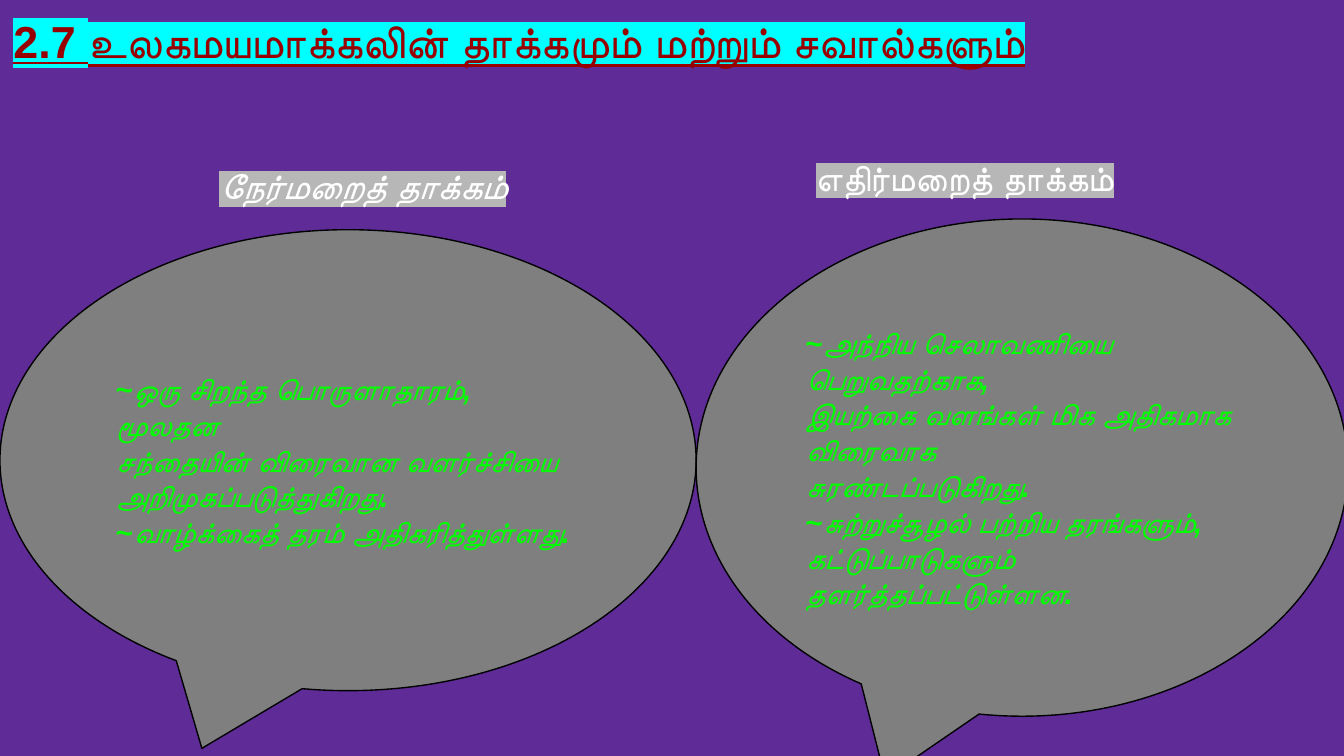
from lxml import etree
from pptx import Presentation
from pptx.dml.color import RGBColor
from pptx.enum import shapes, text
from pptx.oxml import ns
from pptx.util import Inches, Pt

HUES = {
    "back": "5E2B97", "title": "980000", "cyan": "00FFFF", "bubble": "7F7F7F",
    "edge": "000000", "green": "00FF00", "white": "FFFFFF", "grey": "B7B7B7",
}
GOOD = [
    "~ஒரு சிறந்த பொருளாதாரம், மூலதன",
    "சந்தையின் விரைவான வளர்ச்சியை",
    "அறிமுகப்படுத்துகிறது.",
    "~வாழ்க்கைத் தரம் அதிகரித்துள்ளது.",
]
BAD = [
    "~அந்நிய செலாவணியை பெறுவதற்காக,",
    "இயற்கை வளங்கள் மிக அதிகமாக விரைவாக",
    "சுரண்டப்படுகிறது.",
    "~சுற்றுச்சூழல் பற்றிய தரங்களும்,",
    "கட்டுப்பாடுகளும் தளர்த்தப்பட்டுள்ளன.",
]


def hue(name):
    """Return the named colour."""
    return RGBColor.from_string(HUES[name])


def mark(run, name):
    """Highlight a run."""
    light = etree.SubElement(run._r.get_or_add_rPr(), ns.qn("a:highlight"))
    etree.SubElement(light, ns.qn("a:srgbClr"), val=HUES[name])


def write(shape, lines, size, color, anchor="TOP", light=None, italic=False, under=False):
    """Fill a shape with bold left-aligned paragraphs."""
    frame = shape.text_frame
    frame.word_wrap = True
    frame.auto_size = text.MSO_AUTO_SIZE.NONE
    frame.vertical_anchor = text.MSO_ANCHOR[anchor]
    frame.margin_left = frame.margin_right = Inches(0.1)
    frame.margin_top = frame.margin_bottom = Inches(0.1)
    frame.text = "\n".join(lines)
    for para in frame.paragraphs:
        para.alignment = text.PP_ALIGN.LEFT
        para.line_spacing = 1.0
        para.space_before = Pt(0)
        font = para.font
        font.name, font.size = "Arial", Pt(size)
        font.bold, font.italic, font.underline = True, italic, under
        font.color.rgb = hue(color)
        if light:
            mark(para.runs[0], light)


def head(slide, line):
    """Place the slide title."""
    title = slide.shapes.title
    title.left, title.top = Inches(0), Inches(0)
    title.width, title.height = Inches(10.31), Inches(1)
    write(title, [line], 24, "title", light="cyan", under=True)


def label(slide, left, top, line, italic):
    """Add a highlighted caption."""
    box = slide.shapes.add_textbox(Inches(left), Inches(top), Inches(3.28), Inches(0.52))
    write(box, [line], 19, "white", light="grey", italic=italic)


def bubble(slide, left, top, width, height, lines):
    """Add a speech bubble with its points."""
    shape = slide.shapes.add_shape(
        shapes.MSO_SHAPE.OVAL_CALLOUT,
        Inches(left), Inches(top), Inches(width), Inches(height))
    shape.adjustments[0], shape.adjustments[1] = -0.21, 5 / 8
    shape.shadow.inherit = False
    shape.fill.solid()
    shape.fill.fore_color.rgb = hue("bubble")
    shape.line.color.rgb = hue("edge")
    shape.line.width = Pt(0.75)
    write(shape, lines, 16, "green", anchor="MIDDLE", italic=True)


def main():
    """Build and save the slide."""
    deck = Presentation()
    deck.slide_width, deck.slide_height = Inches(10), Inches(10 * 9 / 16)
    slide = deck.slides.add_slide(deck.slide_layouts[5])
    slide.background.fill.solid()
    slide.background.fill.fore_color.rgb = hue("back")
    head(slide, "2.7 உலகமயமாக்கலின் தாக்கமும் மற்றும் சவால்களும்")
    bubble(slide, 0, 1.71, 5.18, 3.43, GOOD)
    label(slide, 1.53, 1.12, "நேர்மறைத் தாக்கம்", True)
    label(slide, 5.97, 1.06, "எதிர்மறைத் தாக்கம்", False)
    bubble(slide, 5.18, 1.63, 4.85, 3.7, BAD)
    deck.save("out.pptx")


if __name__ == "__main__":
    main()
